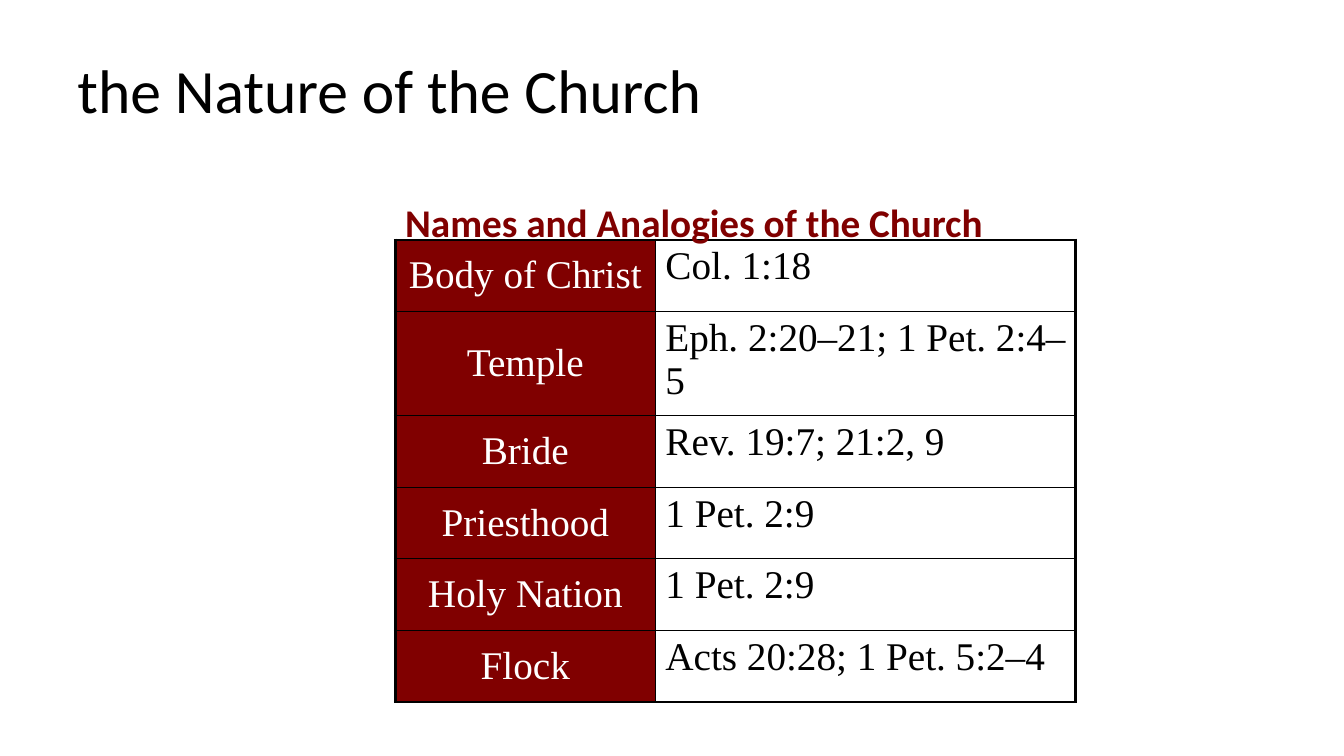
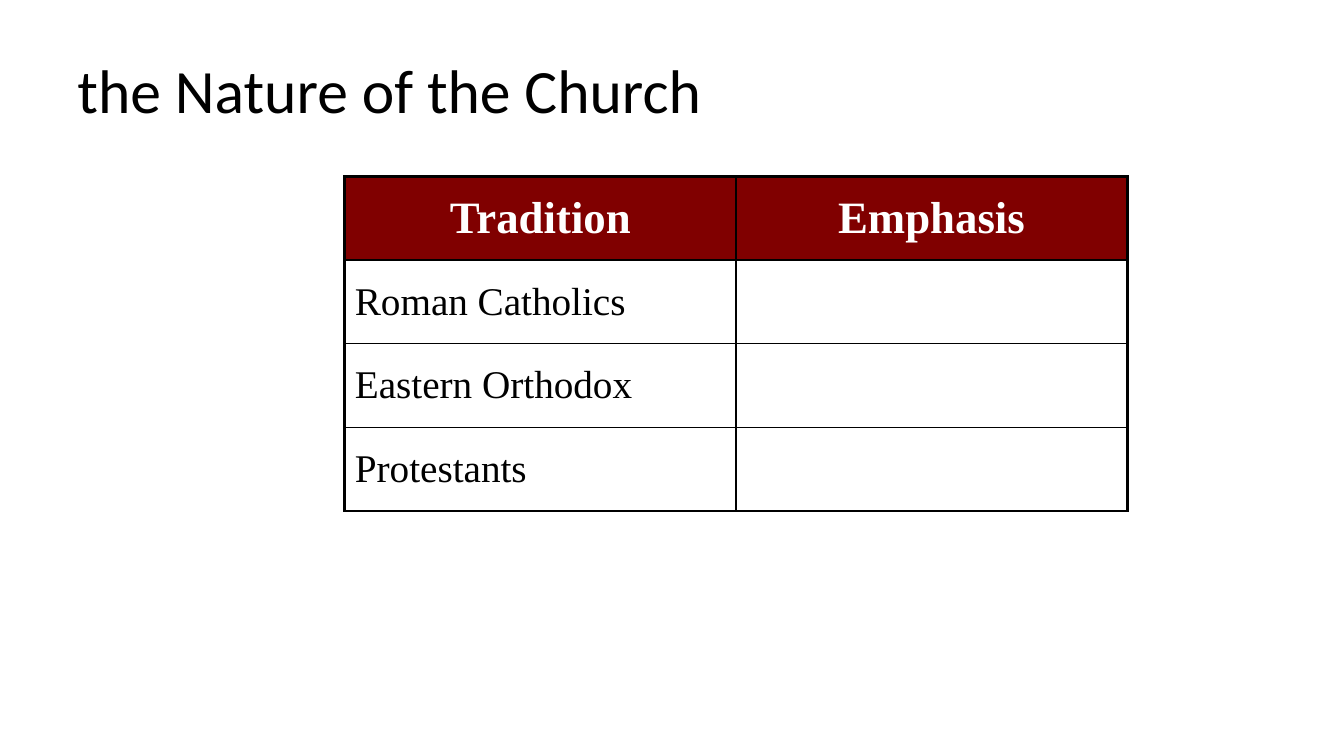
from lxml import etree
from pptx import Presentation
from pptx.dml.color import RGBColor
from pptx.enum.text import MSO_ANCHOR, PP_ALIGN
from pptx.oxml.ns import qn
from pptx.util import Pt

EMU_PER_PX = 9144  # 100 px to the inch
LEFT, CENTER = PP_ALIGN.LEFT, PP_ALIGN.CENTER
TOP, MIDDLE = MSO_ANCHOR.TOP, MSO_ANCHOR.MIDDLE
COLORS = {"black": "000000", "white": "FFFFFF", "maroon": "800000"}
HEADING_FONT, TABLE_FONT = "Calibri", "Times New Roman"
OUTER_PT, INNER_PT = 2.25, 1


def px(length):
    return length * EMU_PER_PX


class Deck:
    def __init__(self, width, height):
        self.prs = Presentation()
        self.prs.slide_width, self.prs.slide_height = px(width), px(height)
        self.slide = None

    def add_slide(self, title):
        self.slide = self.prs.slides.add_slide(self.prs.slide_layouts[6])
        heading = self.text(title, (67, 30, 1200, 125), 44, "black", anchor=MIDDLE)
        heading.line_spacing = 0.9

    def style(self, paragraph, font_name, size, color, bold=False, align=LEFT):
        paragraph.alignment = align
        font = paragraph.font
        font.name, font.size, font.bold = font_name, Pt(size), bold
        font.color.rgb = RGBColor.from_string(COLORS[color])

    def text(self, words, box, size, color, bold=False, anchor=TOP):
        frame = self.slide.shapes.add_textbox(*map(px, box)).text_frame
        frame.word_wrap = True
        frame.vertical_anchor = anchor
        paragraph = frame.paragraphs[0]
        paragraph.text = words
        self.style(paragraph, HEADING_FONT, size, color, bold)
        return paragraph

    def borders(self, cell, widths):
        """Draw black cell borders; widths maps L, R, T, B to points."""
        properties = cell._tc.get_or_add_tcPr()
        for side, width in widths.items():
            line = etree.SubElement(properties, qn(f"a:ln{side}"), w=str(int(Pt(width))))
            fill = etree.SubElement(line, qn("a:solidFill"))
            etree.SubElement(fill, qn("a:srgbClr"), val=COLORS["black"])

    def table(self, rows, left, top, col_widths, row_height, cell_style):
        """Draw a grid; cell_style(row, col) gives size, bold, is_header and anchor."""
        last_row, last_col = len(rows) - 1, len(col_widths) - 1
        grid = self.slide.shapes.add_table(
            len(rows), len(col_widths), px(left), px(top),
            px(sum(col_widths)), px(row_height * len(rows))).table
        grid.first_row = grid.horz_banding = False
        for column, width in zip(grid.columns, col_widths):
            column.width = px(width)
        for r, row in enumerate(rows):
            for c, words in enumerate(row):
                size, bold, is_header, anchor = cell_style(r, c)
                cell = grid.cell(r, c)
                edges = {"L": c == 0, "R": c == last_col, "T": r == 0, "B": r == last_row}
                self.borders(cell, {side: OUTER_PT if is_edge else INNER_PT
                                    for side, is_edge in edges.items()})
                if is_header:
                    cell.fill.solid()
                    cell.fill.fore_color.rgb = RGBColor.from_string(COLORS["maroon"])
                else:
                    cell.fill.background()
                cell.vertical_anchor = anchor
                paragraph = cell.text_frame.paragraphs[0]
                paragraph.text = words
                self.style(paragraph, TABLE_FONT, size, "white" if is_header else "black",
                           bold, CENTER if is_header else LEFT)


def names_style(row, col):
    return 28, False, col == 0, MIDDLE if col == 0 else TOP


def traditions_style(row, col):
    return 32 if row == 0 else 28, row == 0, row == 0, MIDDLE


def main():
    title = "the Nature of the Church"
    names = [
        ("Body of Christ", "Col. 1:18"),
        ("Temple", "Eph. 2:20–21; 1 Pet. 2:4–5"),
        ("Bride", "Rev. 19:7; 21:2, 9"),
        ("Priesthood", "1 Pet. 2:9"),
        ("Holy Nation", "1 Pet. 2:9"),
        ("Flock", "Acts 20:28; 1 Pet. 5:2–4"),
    ]
    traditions = [
        ("Tradition", "Emphasis"),
        ("Roman Catholics", ""),
        ("Eastern Orthodox", ""),
        ("Protestants", ""),
    ]
    deck = Deck(1333, 750)

    deck.add_slide(title)
    deck.table(names, 392, 238, (258, 417), 71, names_style)
    deck.text("Names and Analogies of the Church", (392, 192, 742, 57), 28, "maroon", bold=True)

    deck.add_slide(title)
    deck.table(traditions, 342, 175, (388, 388), 83, traditions_style)

    deck.prs.save("out.pptx")


if __name__ == "__main__":
    main()
